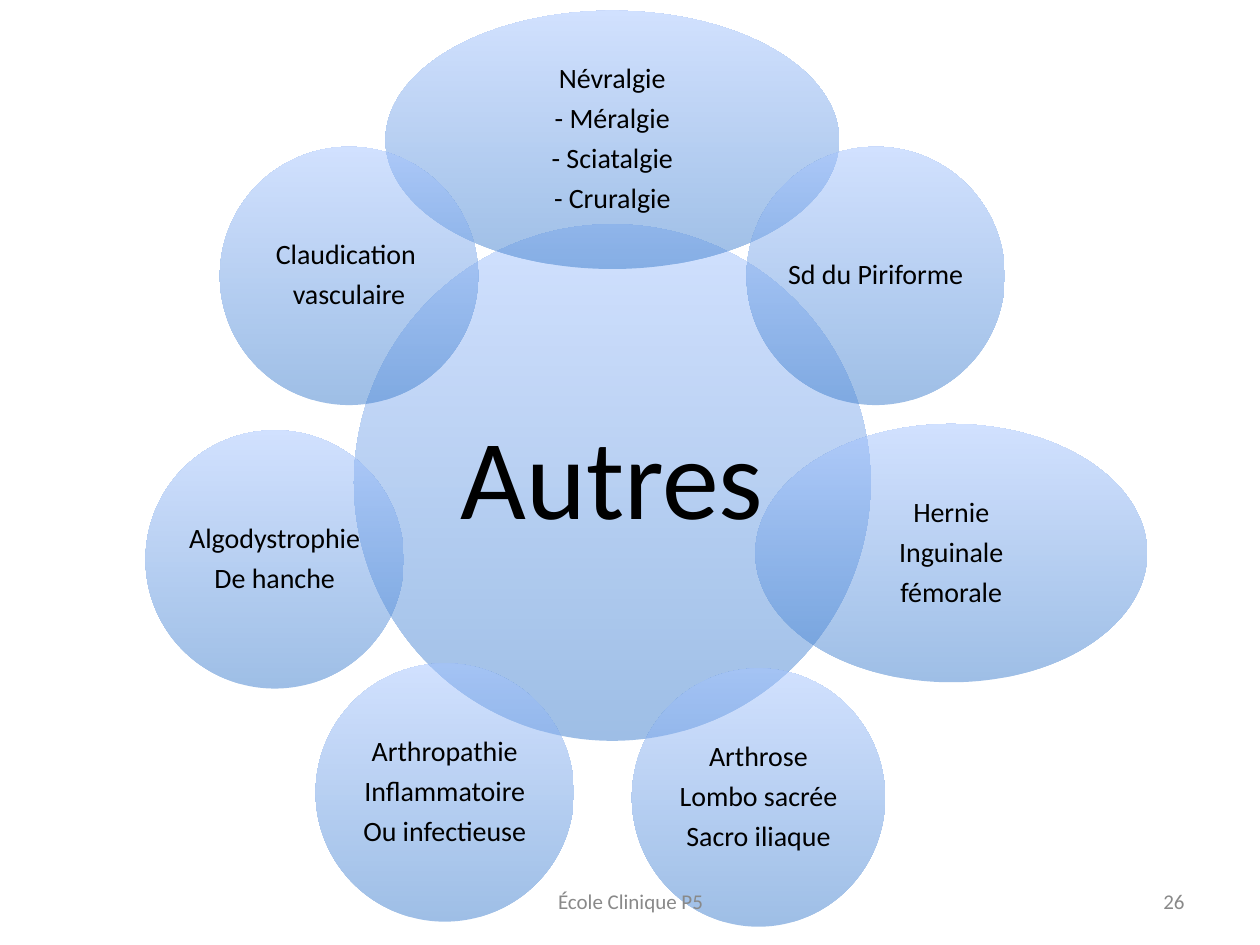
from lxml.etree import SubElement
from pptx import Presentation
from pptx.dml.color import RGBColor
from pptx.enum.shapes import MSO_SHAPE
from pptx.enum.text import MSO_ANCHOR, PP_ALIGN
from pptx.oxml.ns import qn
from pptx.util import Inches, Pt

DEEP_BLUE = RGBColor(0x3F, 0x7F, 0xCE)
PALE_BLUE = RGBColor(0xA4, 0xC4, 0xFF)
BLACK = RGBColor(0, 0, 0)
GREY = RGBColor(0x89, 0x89, 0x89)
FONT = "Calibri"
OPACITY = "50000"

HUB_CENTRE = (4.86, 3.83)
HUB_SIZE = 4.1
PETAL_SIZE = HUB_SIZE / 2
FOOTER_TOP, FOOTER_HEIGHT = 6.95, 0.4

HUB = ["Autres"]
PETALS = [
    (["Névralgie", "- Méralgie", "- Sciatalgie", "- Cruralgie"], (0, -2.72), 3.6),
    (["Sd du Piriforme"], (2.09, -1.64), PETAL_SIZE),
    (["Hernie", "Inguinale", "fémorale"], (2.69, 0.56), 3.11),
    (["Arthrose", "Lombo sacrée", "Sacro iliaque"], (1.16, 2.5), 2.01),
    (["Arthropathie", "Inflammatoire", "Ou infectieuse"], (-1.33, 2.46), PETAL_SIZE),
    (["Algodystrophie", "De hanche"], (-2.68, 0.61), PETAL_SIZE),
    (["Claudication ", "vasculaire"], (-2.09, -1.64), PETAL_SIZE),
]
FOOTERS = [
    ("26", 7.17, 2.33, PP_ALIGN.RIGHT),
    ("École Clinique P5", 3.42, 3.17, PP_ALIGN.CENTER),
]


def write_lines(frame, lines, size, color, align):
    """Fill a text frame with one formatted paragraph per line."""
    frame.text = "\n".join(lines)
    frame.vertical_anchor = MSO_ANCHOR.MIDDLE
    for para in frame.paragraphs:
        para.alignment = align
        for span in para.runs:
            span.font.name = FONT
            span.font.size = Pt(size)
            span.font.color.rgb = color


def fill_gradient(shape):
    """Give a shape the translucent blue gradient, palest at the top."""
    shape.fill.gradient()
    shape.fill.gradient_angle = 90
    for stop, color, position in zip(
        shape.fill.gradient_stops, (DEEP_BLUE, PALE_BLUE), (0, 1)
    ):
        stop.color.rgb = color
        stop.position = position
    for color in list(shape._element.spPr.iter(qn("a:srgbClr"))):
        SubElement(color, qn("a:alpha")).set("val", OPACITY)


def add_bubble(page, lines, offset, width, height, size, inset):
    """Add an ellipse centred at an offset from the hub's centre."""
    x, y = (centre + shift for centre, shift in zip(HUB_CENTRE, offset))
    bubble = page.shapes.add_shape(
        MSO_SHAPE.OVAL,
        Inches(x - width / 2), Inches(y - height / 2), Inches(width), Inches(height),
    )
    bubble.shadow.inherit = False
    fill_gradient(bubble)
    bubble.line.fill.background()
    frame = bubble.text_frame
    frame.word_wrap = False
    frame.margin_left = frame.margin_right = Inches(inset)
    frame.margin_top = frame.margin_bottom = Inches(inset)
    write_lines(frame, lines, size, BLACK, PP_ALIGN.CENTER)
    for para in frame.paragraphs:
        para.line_spacing = 0.9
        para.space_after = Pt(size * 0.35)


def main():
    """Build the slide and save it."""
    deck = Presentation()
    deck.slide_width, deck.slide_height = Inches(10), Inches(7.5)
    page = deck.slides.add_slide(deck.slide_layouts[6])
    add_bubble(page, HUB, (0, 0), HUB_SIZE, HUB_SIZE, 65, 0.09)
    for lines, offset, width in PETALS:
        add_bubble(page, lines, offset, width, PETAL_SIZE, 16, 0.02)
    for text, left, width, align in FOOTERS:
        box = page.shapes.add_textbox(
            Inches(left), Inches(FOOTER_TOP), Inches(width), Inches(FOOTER_HEIGHT)
        )
        box.text_frame.word_wrap = True
        write_lines(box.text_frame, [text], 12, GREY, align)
    deck.save("out.pptx")


if __name__ == "__main__":
    main()
